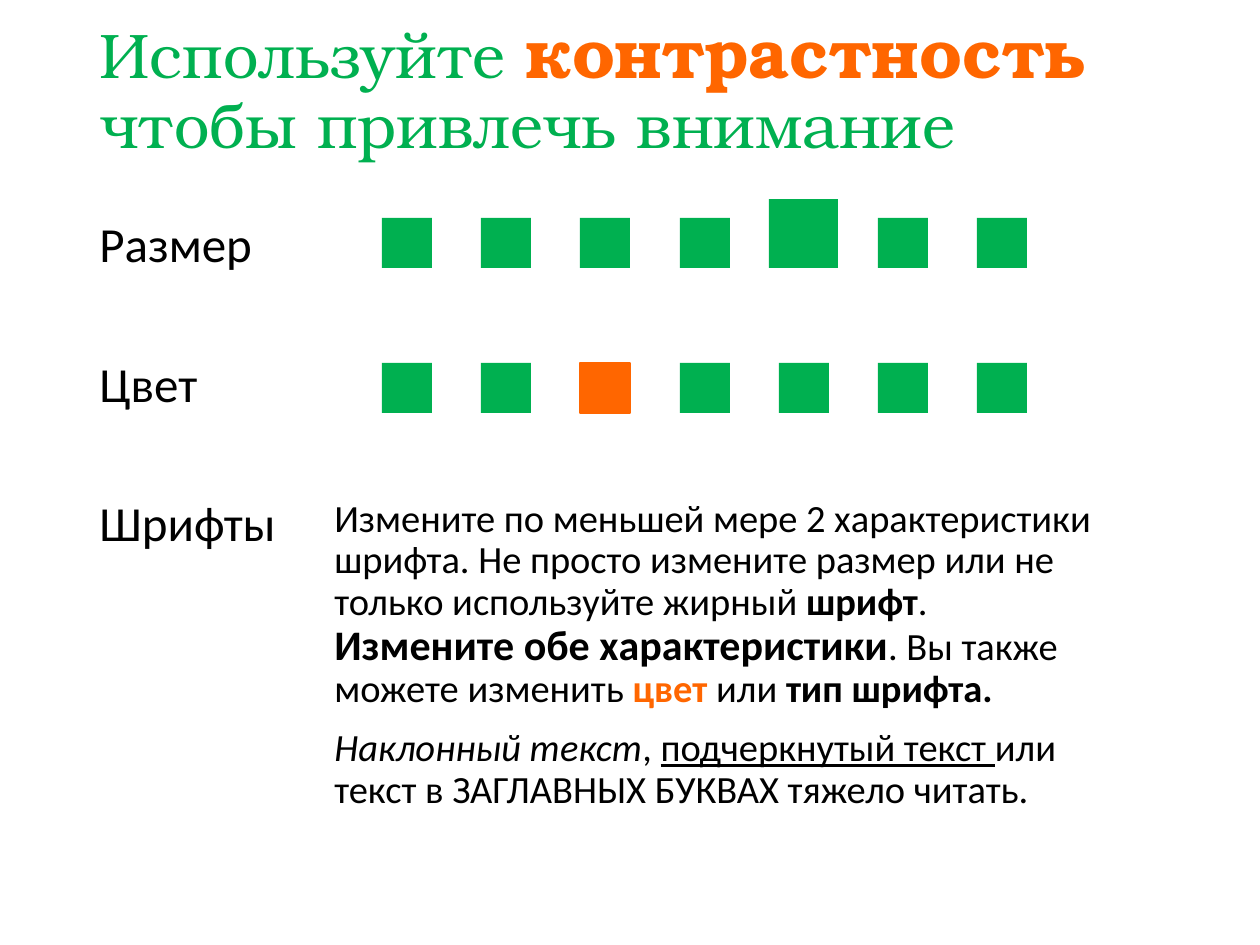
from dataclasses import dataclass

from pptx import Presentation
from pptx.dml.color import RGBColor
from pptx.enum.shapes import MSO_SHAPE
from pptx.enum.text import MSO_ANCHOR
from pptx.util import Emu, Pt

RECTANGLE = MSO_SHAPE.RECTANGLE
TOP = MSO_ANCHOR.TOP
MIDDLE = MSO_ANCHOR.MIDDLE

PIXELS_PER_INCH = 126
GREEN, ORANGE, BLACK = "00B050", "FF6600", "000000"
TITLE_FONT, BODY_FONT = "TeX Gyre Bonum", "Calibri"

SQUARE_COUNT = 7
SQUARE_SIZE = 50
FIRST_SQUARE_LEFT = 382
SQUARES_SPAN = 595
LABEL_LEFT = 87


@dataclass(frozen=True)
class Run:
    text: str
    size: float = 22
    color: str = BLACK
    bold: bool = False
    italic: bool = False
    underline: bool = False
    font: str = BODY_FONT


@dataclass(frozen=True)
class Label:
    text: str
    top: int
    width: int


@dataclass(frozen=True)
class SquareRow:
    top: int
    accent_index: int
    accent_size: int
    accent_color: str
    accent_outlined: bool


LABELS = [
    Label("Размер", 214, 256),
    Label("Цвет", 354, 256),
    Label("Шрифты", 493, 215),
]
SQUARE_ROWS = [
    SquareRow(218, 4, 69, GREEN, False),
    SquareRow(363, 2, SQUARE_SIZE, ORANGE, True),
]
TITLE = [[
    Run("Используйте ", 36, GREEN, font=TITLE_FONT),
    Run("контрастность ", 39.6, ORANGE, bold=True, font=TITLE_FONT),
    Run("чтобы привлечь внимание", 36, GREEN, font=TITLE_FONT),
]]
FONT_ADVICE = [
    [
        Run("Измените по меньшей мере 2 характеристики шрифта. "
            "Не просто измените размер или не только используйте жирный "),
        Run("шрифт", bold=True),
        Run(". "),
        Run("Измените обе характеристики", 24, bold=True),
        Run(". Вы также можете изменить"),
        Run(" цвет ", color=ORANGE, bold=True),
        Run("или "),
        Run("тип шрифта.", bold=True),
    ],
    [
        Run("Наклонный текст", italic=True),
        Run(", "),
        Run("подчеркнутый текст ", underline=True),
        Run("или текст в ЗАГЛАВНЫХ БУКВАХ тяжело читать."),
    ],
]


def px(length: int) -> Emu:
    return Emu(round(length * 914400 / PIXELS_PER_INCH))


def rgb(color: str) -> RGBColor:
    return RGBColor.from_string(color)


def add_text(slide, paragraphs: list[list[Run]], *, left: int, top: int,
             width: int, height: int, anchor=TOP, space_before: int = 10) -> None:
    box = slide.shapes.add_textbox(px(left), px(top), px(width), px(height))
    frame = box.text_frame
    frame.word_wrap = True
    frame.vertical_anchor = anchor
    for index, runs in enumerate(paragraphs):
        paragraph = frame.add_paragraph() if index else frame.paragraphs[0]
        paragraph.line_spacing = 0.9
        paragraph.space_before = Pt(space_before)
        for item in runs:
            run = paragraph.add_run()
            run.text = item.text
            font = run.font
            font.name = item.font
            font.size = Pt(item.size)
            font.bold = item.bold
            font.italic = item.italic
            font.underline = item.underline
            font.color.rgb = rgb(item.color)


def add_square(slide, left: int, top: int, size: int, color: str,
               outlined: bool) -> None:
    square = slide.shapes.add_shape(RECTANGLE, px(left), px(top), px(size), px(size))
    square.shadow.inherit = False
    square.fill.solid()
    square.fill.fore_color.rgb = rgb(color)
    if outlined:
        square.line.color.rgb = rgb(color)
        square.line.width = Pt(1)
    else:
        square.line.fill.background()


def add_square_row(slide, row: SquareRow) -> None:
    for index in range(SQUARE_COUNT):
        left = FIRST_SQUARE_LEFT + round(SQUARES_SPAN * index / (SQUARE_COUNT - 1))
        if index == row.accent_index:
            growth = row.accent_size - SQUARE_SIZE
            add_square(slide, left - (growth + 1) // 2, row.top - growth,
                       row.accent_size, row.accent_color, row.accent_outlined)
        else:
            add_square(slide, left, row.top, SQUARE_SIZE, GREEN, False)


def main() -> None:
    presentation = Presentation()
    presentation.slide_width = px(1260)
    presentation.slide_height = px(945)
    slide = presentation.slides.add_slide(presentation.slide_layouts[6])

    add_text(slide, TITLE, left=LABEL_LEFT, top=26, width=1086, height=129,
             anchor=MIDDLE, space_before=0)
    for row in SQUARE_ROWS:
        add_square_row(slide, row)
    for label in LABELS:
        add_text(slide, [[Run(label.text, 28)]], left=LABEL_LEFT, top=label.top,
                 width=label.width, height=79)
    add_text(slide, FONT_ADVICE, left=322, top=493, width=784, height=297)

    presentation.save("out.pptx")


if __name__ == "__main__":
    main()
